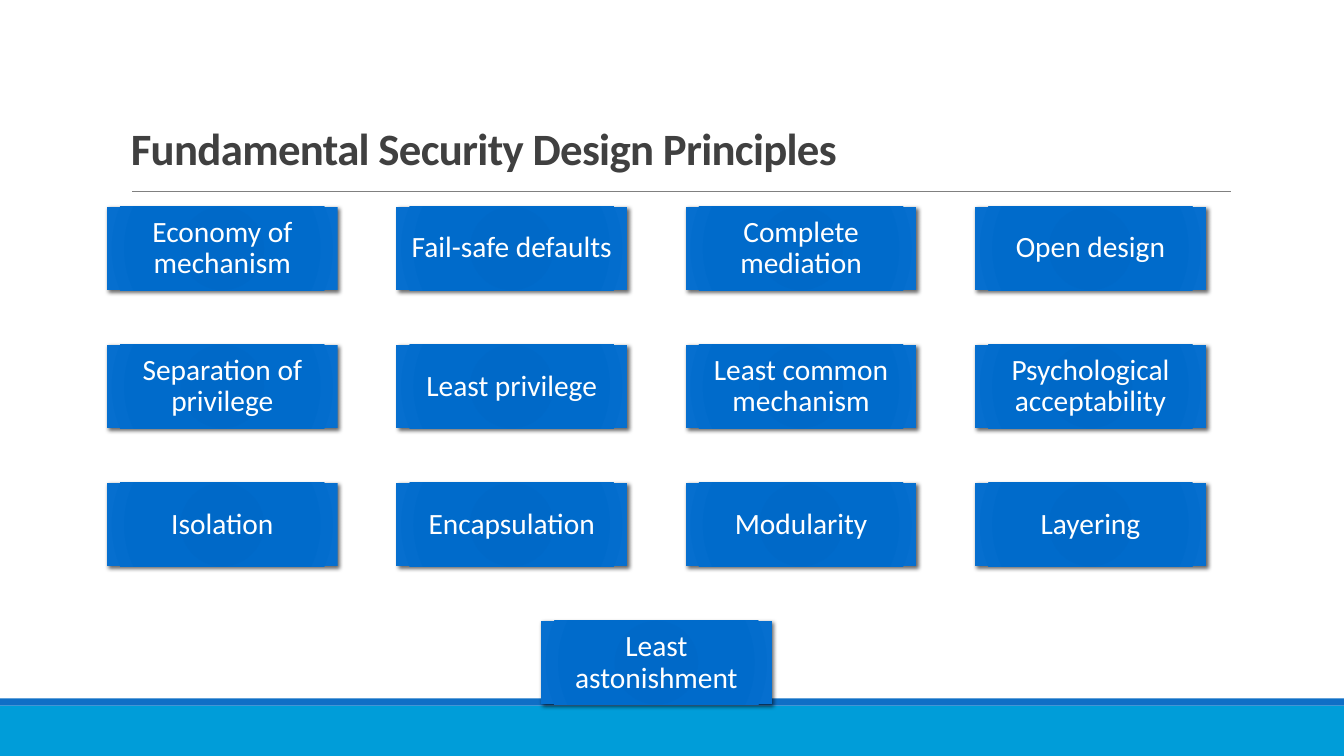
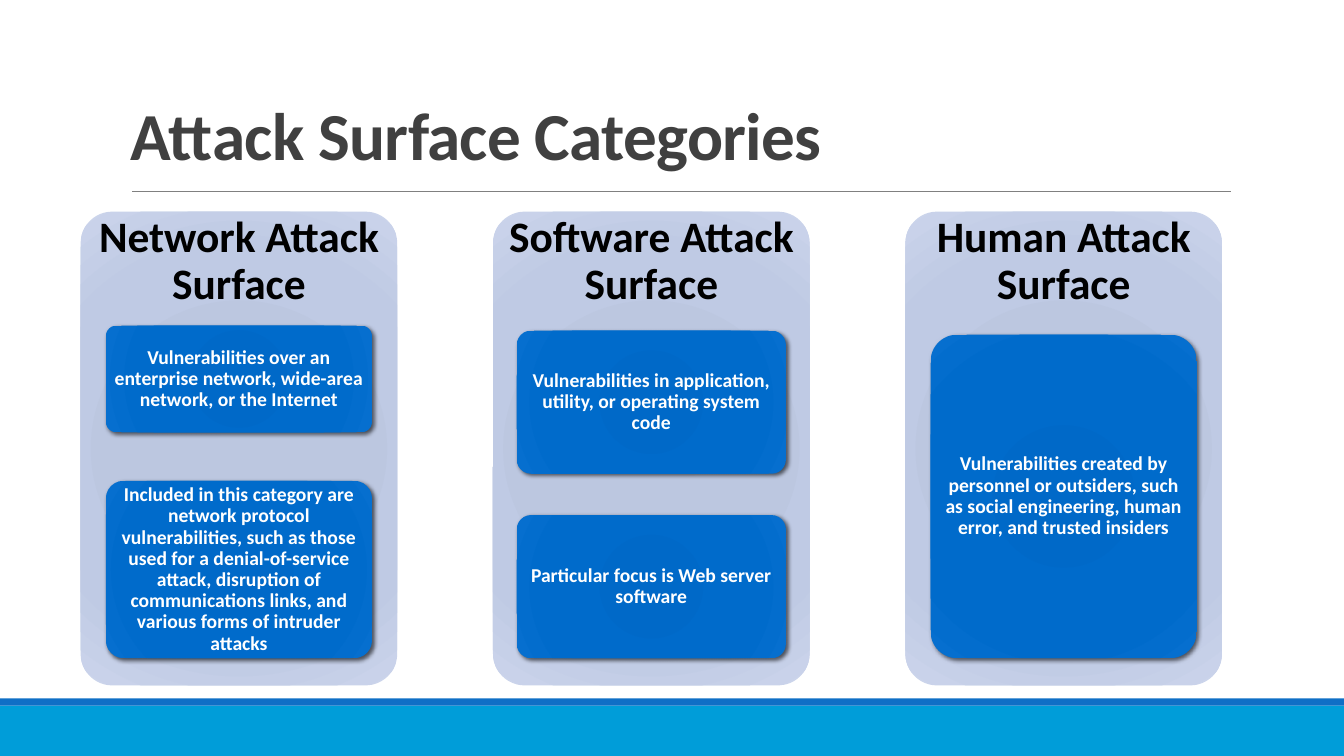
"""Build two slides on security design principles and attack surfaces."""
import dataclasses

import pptx
import pptx.dml.color
import pptx.enum.shapes
import pptx.enum.text
import pptx.oxml
import pptx.oxml.ns
import pptx.util

EMU_PER_PX = 9144
SLIDE_WIDTH, SLIDE_HEIGHT = 1333, 750
CORNER_RATIO = 0.1
CORNER_TEXT_INSET = 0.29

PRINCIPLES_TITLE = "Fundamental Security Design Principles"
PRINCIPLES = [
    ["Economy of mechanism", "Fail-safe defaults", "Complete mediation", "Open design"],
    ["Separation of privilege", "Least privilege", "Least common mechanism",
     "Psychological acceptability"],
    ["Isolation", "Encapsulation", "Modularity", "Layering"],
    ["Least astonishment"],
]

CATEGORIES_TITLE = "Attack Surface Categories"
CATEGORIES = [
    {"heading": "Network Attack Surface", "card_width": 264, "padding": 7, "cards": [
        (323, 106, "Vulnerabilities over an enterprise network, wide-area network, "
                   "or the Internet"),
        (477, 176, "Included in this category are network protocol vulnerabilities, "
                   "such as those used for a denial-of-service attack, disruption of "
                   "communications links, and various forms of intruder attacks"),
    ]},
    {"heading": "Software Attack Surface", "card_width": 267, "padding": 7, "cards": [
        (328, 142, "Vulnerabilities in application, utility, or operating system code"),
        (511, 142, "Particular focus is Web server software"),
    ]},
    {"heading": "Human Attack Surface", "card_width": 264, "padding": 10, "cards": [
        (332, 321, "Vulnerabilities created by personnel or outsiders, such as social "
                   "engineering, human error, and trusted insiders"),
    ]},
]


@dataclasses.dataclass(frozen=True)
class Theme:
    """Colours and type sizes of the deck."""
    font: str = "Calibri"
    band: str = "009DD9"
    band_edge: str = "0F6FC6"
    rule: str = "808080"
    title: str = "404040"
    heading: str = "000000"
    card_text: str = "FFFFFF"
    card_fill: tuple = ((0, "0068C6"), (34, "0069C8"), (70, "006BCB"), (100, "066FCF"))
    column_fill: tuple = ((0, "BAC5DE"), (34, "BCC7E0"), (70, "BFCAE4"), (100, "CBD4EB"))
    principle_size: int = 21
    heading_size: int = 31
    card_size: int = 14


THEME = Theme()
SHAPE_TYPE = pptx.enum.shapes.MSO_SHAPE
ANCHOR = pptx.enum.text.MSO_ANCHOR
ALIGN = pptx.enum.text.PP_ALIGN


def px(*lengths):
    """Turn px lengths into EMU."""
    return [pptx.util.Emu(round(length * EMU_PER_PX)) for length in lengths]


def rgb(colour):
    """Turn a hex string into a colour."""
    return pptx.dml.color.RGBColor.from_string(colour)


def write_text(shape, text, size, colour, bold=False, anchor=ANCHOR.MIDDLE,
               align=ALIGN.CENTER, spacing=0.9, margins=(9, 9, 9, 9)):
    """Put one formatted paragraph into a shape and return its run."""
    frame = shape.text_frame
    frame.text = text
    frame.word_wrap = True
    frame.vertical_anchor = anchor
    (frame.margin_left, frame.margin_top,
     frame.margin_right, frame.margin_bottom) = px(*margins)
    paragraph = frame.paragraphs[0]
    paragraph.alignment = align
    paragraph.line_spacing = spacing
    run = paragraph.runs[0]
    run.font.name = THEME.font
    run.font.size = pptx.util.Pt(size)
    run.font.bold = bold
    run.font.color.rgb = rgb(colour)
    return run


def add_plain_shape(slide, kind, box):
    """Add a preset shape without line or shadow."""
    shape = slide.shapes.add_shape(kind, *px(*box))
    shape.line.fill.background()
    shape.shadow.inherit = False
    return shape


def add_gradient_shape(slide, kind, box, stops, shadow=True):
    """Add a shape with a radial gradient and an optional soft shadow."""
    shape = add_plain_shape(slide, kind, box)
    namespace = pptx.oxml.ns.nsdecls("a")
    stop_xml = "".join(
        f'<a:gs pos="{position * 1000}"><a:srgbClr val="{colour}"/></a:gs>'
        for position, colour in stops)
    gradient = pptx.oxml.parse_xml(
        f'<a:gradFill {namespace} rotWithShape="1"><a:gsLst>{stop_xml}</a:gsLst>'
        '<a:path path="circle"><a:fillToRect l="100000" t="100000" r="100000" '
        'b="100000"/></a:path></a:gradFill>')
    properties = shape._element.spPr
    properties.find(pptx.oxml.ns.qn("a:prstGeom")).addnext(gradient)
    if shadow:
        properties.find(pptx.oxml.ns.qn("a:effectLst")).append(pptx.oxml.parse_xml(
            f'<a:outerShdw {namespace} blurRad="38100" dist="25400" dir="2700000" '
            'rotWithShape="0"><a:srgbClr val="000000"><a:alpha val="60000"/>'
            '</a:srgbClr></a:outerShdw>'))
    return shape


def add_rounded_shape(slide, box, stops, shadow=True):
    """Add a rounded gradient shape and return it with its text inset."""
    shape = add_gradient_shape(slide, SHAPE_TYPE.ROUNDED_RECTANGLE, box, stops, shadow)
    shape.adjustments[0] = CORNER_RATIO
    return shape, min(box[2:]) * CORNER_RATIO * CORNER_TEXT_INSET


def add_base_slide(presentation, title, title_size):
    """Add a slide with the shared bands, rule and title."""
    slide = presentation.slides.add_slide(presentation.slide_layouts[6])
    for top, height, colour in ((700, 50, THEME.band), (693, 7, THEME.band_edge)):
        band = add_plain_shape(slide, SHAPE_TYPE.RECTANGLE, (0, top, SLIDE_WIDTH, height))
        band.fill.solid()
        band.fill.fore_color.rgb = rgb(colour)
    rule = slide.shapes.add_connector(
        pptx.enum.shapes.MSO_CONNECTOR.STRAIGHT, *px(131, 190, 1221, 190))
    rule.line.color.rgb = rgb(THEME.rule)
    rule.line.width = pptx.util.Pt(0.5)
    rule._element.spPr.append(pptx.oxml.parse_xml(
        f'<a:effectLst {pptx.oxml.ns.nsdecls("a")}/>'))
    title_box = slide.shapes.add_textbox(*px(120, 19, 1100, 159))
    run = write_text(title_box, title, title_size, THEME.title, bold=True,
                     anchor=ANCHOR.BOTTOM, align=ALIGN.LEFT, spacing=0.85,
                     margins=(10, 5, 10, 5))
    run._r.get_or_add_rPr().set("spc", "-50")
    return slide


def add_principles(slide):
    """Draw the rows of principles, each centred on the grid."""
    left, top, width, height, gap_x, gap_y = 106, 205, 229, 83, 58, 54
    pitch = width + gap_x
    columns = len(PRINCIPLES[0])
    for row, names in enumerate(PRINCIPLES):
        row_left = left + (columns - len(names)) * pitch / 2
        for column, name in enumerate(names):
            box = (row_left + column * pitch, top + row * (height + gap_y), width, height)
            shape = add_gradient_shape(slide, SHAPE_TYPE.RECTANGLE, box, THEME.card_fill)
            write_text(shape, name, THEME.principle_size, THEME.card_text)


def add_categories(slide):
    """Draw one column per category with its cards centred inside."""
    left, top, width, height, gap = 80, 210, 314, 470, 95
    for index, category in enumerate(CATEGORIES):
        column_left = left + index * (width + gap)
        column, inset = add_rounded_shape(
            slide, (column_left, top, width, height), THEME.column_fill, shadow=False)
        margin = 13 - inset
        write_text(column, category["heading"], THEME.heading_size, THEME.heading,
                   bold=True, margins=(margin, margin, margin, 383 - inset))
        card_width = category["card_width"]
        card_left = column_left + (width - card_width) / 2
        for card_top, card_height, text in category["cards"]:
            card, inset = add_rounded_shape(
                slide, (card_left, card_top, card_width, card_height), THEME.card_fill)
            write_text(card, text, THEME.card_size, THEME.card_text, bold=True,
                       margins=(category["padding"] - inset,) * 4)


def main():
    """Build and save the presentation."""
    presentation = pptx.Presentation()
    presentation.slide_width, presentation.slide_height = px(SLIDE_WIDTH, SLIDE_HEIGHT)
    add_principles(add_base_slide(presentation, PRINCIPLES_TITLE, 32))
    add_categories(add_base_slide(presentation, CATEGORIES_TITLE, 48))
    presentation.save("out.pptx")


if __name__ == "__main__":
    main()
